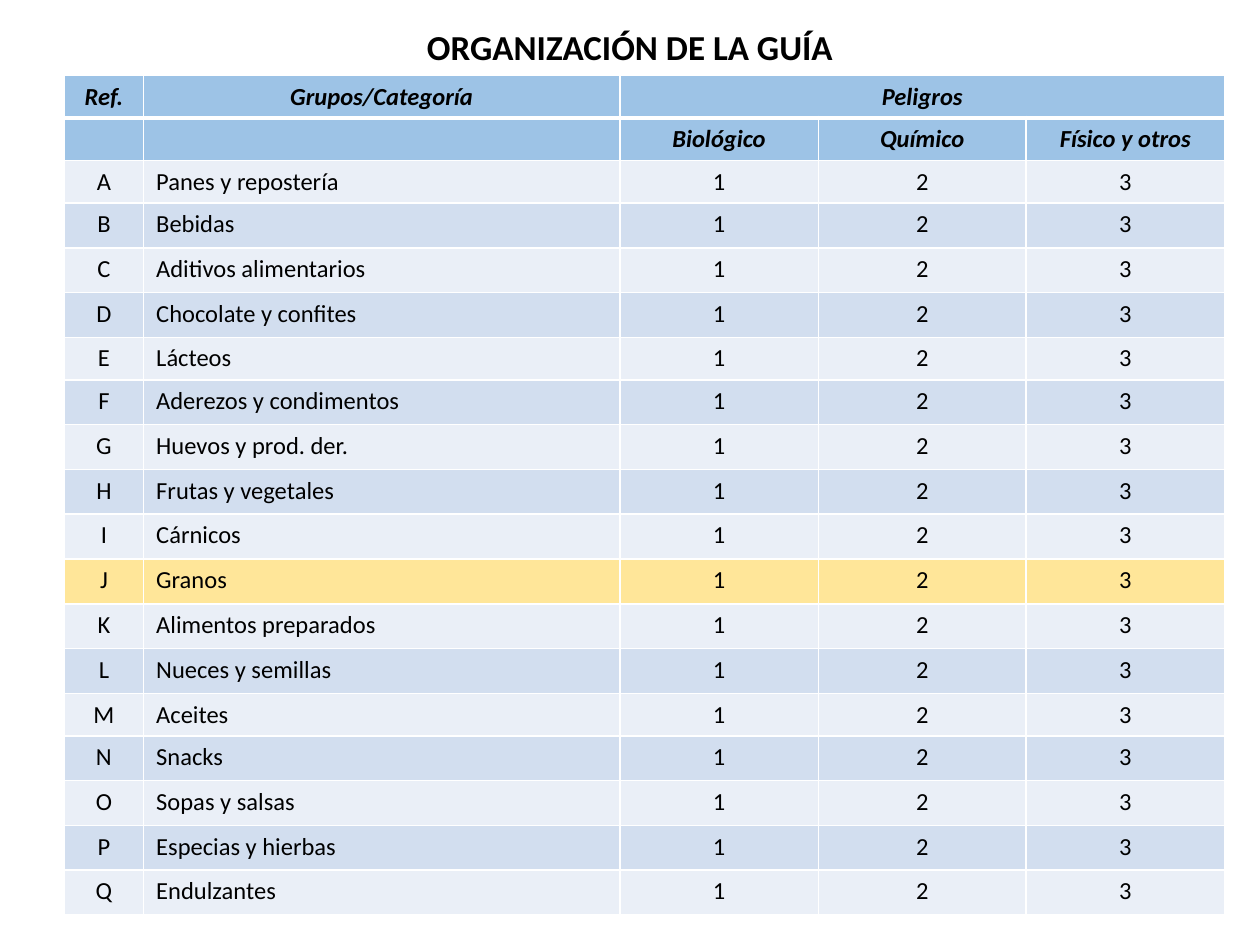
from dataclasses import dataclass

from lxml import etree
from pptx import Presentation
from pptx.dml.color import RGBColor
from pptx.enum.text import MSO_ANCHOR, MSO_AUTO_SIZE, PP_ALIGN
from pptx.oxml.ns import qn
from pptx.util import Inches, Pt

CENTER, LEFT = PP_ALIGN.CENTER, PP_ALIGN.LEFT
MIDDLE, NO_AUTOFIT = MSO_ANCHOR.MIDDLE, MSO_AUTO_SIZE.NONE
TITLE_ONLY = 5


@dataclass(frozen=True)
class Theme:
    font: str = "Calibri"
    text: str = "000000"
    border: str = "FFFFFF"
    header: str = "9DC3E6"
    light_band: str = "EAEFF7"
    dark_band: str = "D2DEEF"
    highlight: str = "FFE699"
    title_size: int = 20
    table_size: int = 14
    thin: int = 1
    thick: int = 3


HEADINGS = [
    ["Ref.", "Grupos/Categoría", "Peligros", "", ""],
    ["", "", "Biológico", "Químico", "Físico y otros"],
]
CATEGORIES = [
    "Panes y repostería", "Bebidas", "Aditivos alimentarios",
    "Chocolate y confites", "Lácteos", "Aderezos y condimentos",
    "Huevos y prod. der.", "Frutas y vegetales", "Cárnicos", "Granos",
    "Alimentos preparados", "Nueces y semillas", "Aceites", "Snacks",
    "Sopas y salsas", "Especias y hierbas", "Endulzantes",
]
HIGHLIGHTED = "Granos"
HAZARD_CODES = ["1", "2", "3"]
COLUMN_SHARES = [6.3, 37.8, 15.75, 16.5, 15.75]
COMPACT_ROWS = {0, 1, 2, 6, 14}
COMPACT_WEIGHT, REGULAR_WEIGHT = 15, 16


class GuideSlide:
    """Builds one slide; lengths are percentages of the slide's size."""

    def __init__(self, presentation, theme):
        self.theme = theme
        self.width = presentation.slide_width
        self.height = presentation.slide_height
        layout = presentation.slide_layouts[TITLE_ONLY]
        self.slide = presentation.slides.add_slide(layout)

    def across(self, share):
        return round(self.width * share / 100)

    def down(self, share):
        return round(self.height * share / 100)

    def box(self, left, top, width, height):
        return (self.across(left), self.down(top),
                self.across(width), self.down(height))

    def add_text(self, paragraph, text, size, bold=False, italic=False):
        run = paragraph.add_run()
        run.text = text
        font = run.font
        font.name, font.size = self.theme.font, Pt(size)
        font.bold, font.italic = bold, italic
        font.color.rgb = RGBColor.from_string(self.theme.text)

    def title(self, text, area):
        heading = self.slide.shapes.title
        heading.left, heading.top, heading.width, heading.height = self.box(*area)
        frame = heading.text_frame
        frame.auto_size, frame.vertical_anchor = NO_AUTOFIT, MIDDLE
        paragraph = frame.paragraphs[0]
        paragraph.alignment, paragraph.line_spacing = CENTER, 0.9
        self.add_text(paragraph, text, self.theme.title_size, bold=True)

    def borders(self, cell, top, bottom):
        properties = cell._tc.get_or_add_tcPr()
        thin = self.theme.thin
        for side, points in (("L", thin), ("R", thin), ("T", top), ("B", bottom)):
            line = etree.SubElement(properties, qn(f"a:ln{side}"), w=str(Pt(points)))
            fill = etree.SubElement(line, qn("a:solidFill"))
            etree.SubElement(fill, qn("a:srgbClr"), val=self.theme.border)

    def cell(self, cell, text, color, align, heading):
        cell.fill.solid()
        cell.fill.fore_color.rgb = RGBColor.from_string(color)
        paragraph = cell.text_frame.paragraphs[0]
        paragraph.alignment = align
        size = self.theme.table_size
        if text:
            self.add_text(paragraph, text, size, bold=heading, italic=heading)
        else:
            # Keeps an empty cell from growing to the default text size.
            etree.SubElement(paragraph._p, qn("a:endParaRPr"), sz=str(size * 100))

    def row_color(self, index, category):
        if index < len(HEADINGS):
            return self.theme.header
        if category == HIGHLIGHTED:
            return self.theme.highlight
        return self.theme.dark_band if index % 2 else self.theme.light_band

    def hazard_table(self, rows, left, top, height):
        area = self.box(left, top, sum(COLUMN_SHARES), height)
        table = self.slide.shapes.add_table(
            len(rows), len(COLUMN_SHARES), *area).table
        for column, share in zip(table.columns, COLUMN_SHARES):
            column.width = self.across(share)
        weights = [COMPACT_WEIGHT if i in COMPACT_ROWS else REGULAR_WEIGHT
                   for i in range(len(rows))]
        for row, weight in zip(table.rows, weights):
            row.height = self.down(height * weight / sum(weights))
        table.cell(0, 2).merge(table.cell(0, 4))

        for i, values in enumerate(rows):
            heading = i < len(HEADINGS)
            color = self.row_color(i, values[1])
            above = self.theme.thick if i == 1 else self.theme.thin
            below = self.theme.thick if i == 0 else self.theme.thin
            for j, text in enumerate(values):
                cell = table.cell(i, j)
                align = LEFT if j == 1 and not heading else CENTER
                self.borders(cell, above, below)
                self.cell(cell, text, color, align, heading)


def main():
    presentation = Presentation()
    presentation.slide_width, presentation.slide_height = Inches(10), Inches(7.5)
    guide = GuideSlide(presentation, Theme())
    guide.title("ORGANIZACIÓN DE LA GUÍA", (6.9, 2.8, 86.2, 4.8))
    groups = [[chr(ord("A") + i), category, *HAZARD_CODES]
              for i, category in enumerate(CATEGORIES)]
    guide.hazard_table(HEADINGS + groups, left=5.1, top=8, height=88.67)
    presentation.save("out.pptx")


if __name__ == "__main__":
    main()
